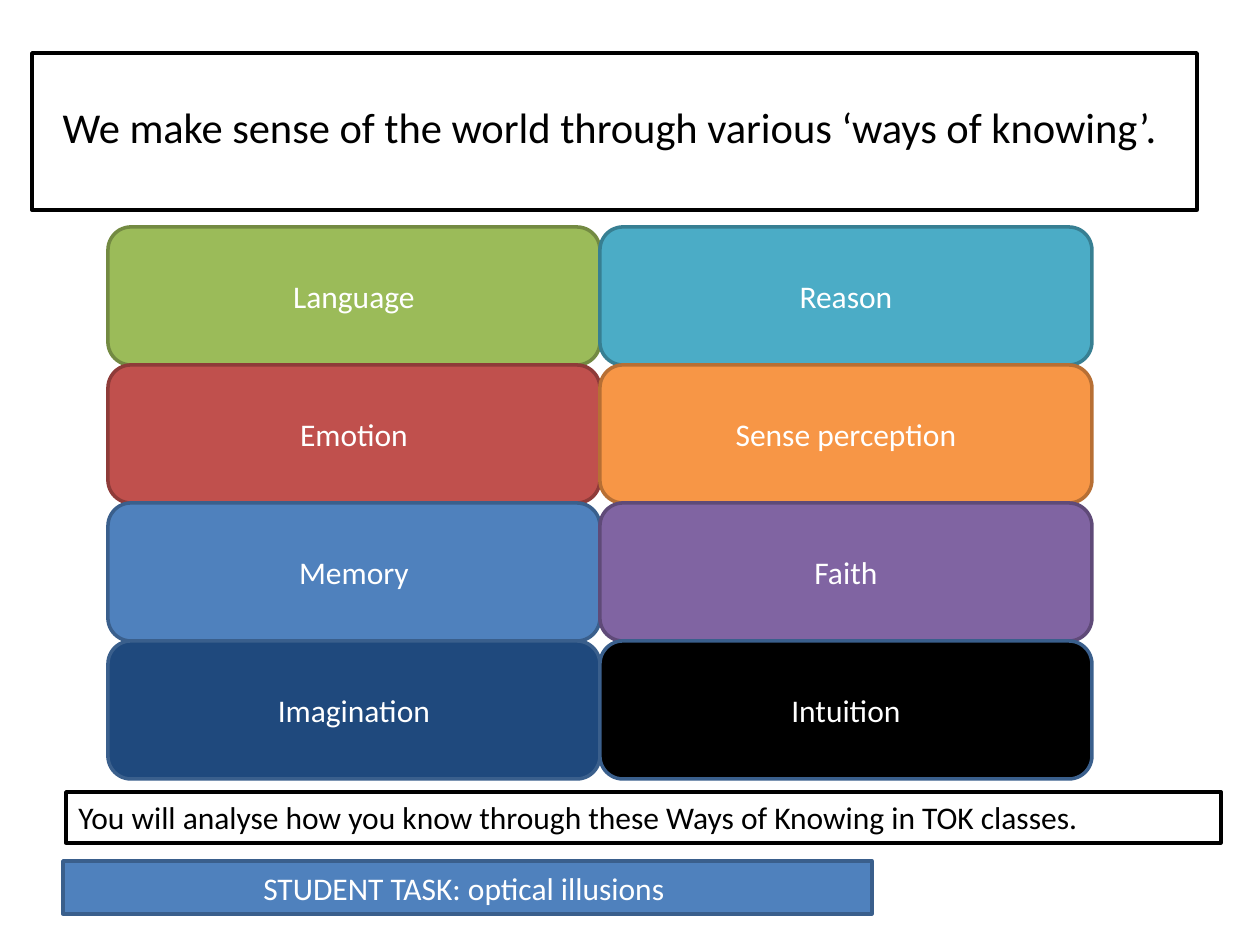
from dataclasses import dataclass

from pptx import Presentation
from pptx.dml.color import RGBColor
from pptx.enum.shapes import MSO_SHAPE
from pptx.enum.text import MSO_ANCHOR, PP_ALIGN
from pptx.util import Emu, Pt

PX_PER_INCH = 126
EMU_PER_PX = 914400 / PX_PER_INCH

WHITE = RGBColor(0xFF, 0xFF, 0xFF)
BLACK = RGBColor(0x00, 0x00, 0x00)
BLUE = RGBColor(0x4F, 0x81, 0xBD)
BLUE_EDGE = RGBColor(0x3A, 0x5F, 0x8C)
NAVY = RGBColor(0x1F, 0x49, 0x7D)
GREEN = RGBColor(0x9B, 0xBB, 0x59)
GREEN_EDGE = RGBColor(0x73, 0x8A, 0x42)
TEAL = RGBColor(0x4B, 0xAC, 0xC6)
TEAL_EDGE = RGBColor(0x37, 0x7F, 0x92)
RED = RGBColor(0xC0, 0x50, 0x4D)
RED_EDGE = RGBColor(0x8E, 0x3B, 0x39)
ORANGE = RGBColor(0xF7, 0x96, 0x46)
ORANGE_EDGE = RGBColor(0xB7, 0x6F, 0x34)
PURPLE = RGBColor(0x80, 0x64, 0xA2)
PURPLE_EDGE = RGBColor(0x5F, 0x4A, 0x78)

# Grid of ways of knowing, in px
GRID_LEFT, GRID_TOP = 108, 227
TILE_WIDTH, TILE_HEIGHT = 492, 138
COLUMNS = 2


@dataclass(frozen=True)
class Way:
    name: str
    fill: RGBColor
    edge: RGBColor


@dataclass(frozen=True)
class Panel:
    text: str
    left: int
    top: int
    width: int
    height: int
    fill: RGBColor
    edge: RGBColor
    ink: RGBColor = WHITE
    size: float = 18
    outline: MSO_SHAPE = MSO_SHAPE.RECTANGLE
    align: PP_ALIGN = PP_ALIGN.CENTER
    anchor: MSO_ANCHOR = MSO_ANCHOR.MIDDLE
    bottom_inset: int = 6


WAYS = [
    Way("Language", GREEN, GREEN_EDGE),
    Way("Reason", TEAL, TEAL_EDGE),
    Way("Emotion", RED, RED_EDGE),
    Way("Sense perception", ORANGE, ORANGE_EDGE),
    Way("Memory", BLUE, BLUE_EDGE),
    Way("Faith", PURPLE, PURPLE_EDGE),
    Way("Imagination", NAVY, BLUE_EDGE),
    Way("Intuition", BLACK, BLUE_EDGE),
]

BANNERS = [
    Panel("We make sense of the world through various ‘ways of knowing’. ",
          32, 53, 1165, 157, WHITE, BLACK, BLACK, size=24.3, bottom_inset=16),
    Panel("You will analyse how you know through these Ways of Knowing in TOK classes.",
          66, 792, 1155, 51, WHITE, BLACK, BLACK,
          align=PP_ALIGN.LEFT, anchor=MSO_ANCHOR.TOP),
    Panel("STUDENT TASK: optical illusions ", 63, 861, 809, 53, BLUE, BLUE_EDGE),
]


def px(length: int) -> Emu:
    return Emu(round(length * EMU_PER_PX))


def apply_format(target, values: dict) -> None:
    for name, value in values.items():
        setattr(target, name, value)


def way_panel(index: int, way: Way) -> Panel:
    row, column = divmod(index, COLUMNS)
    return Panel(way.name, GRID_LEFT + column * TILE_WIDTH, GRID_TOP + row * TILE_HEIGHT,
                 TILE_WIDTH, TILE_HEIGHT, way.fill, way.edge,
                 outline=MSO_SHAPE.ROUNDED_RECTANGLE)


def draw_panel(page, panel: Panel) -> None:
    box = page.shapes.add_shape(panel.outline, px(panel.left), px(panel.top),
                                px(panel.width), px(panel.height))
    box.shadow.inherit = False
    box.fill.solid()
    box.fill.fore_color.rgb = panel.fill
    box.line.color.rgb = panel.edge
    box.line.width = Pt(2)

    frame = box.text_frame
    apply_format(frame, {"word_wrap": True, "vertical_anchor": panel.anchor,
                         "margin_bottom": px(panel.bottom_inset)})
    para = frame.paragraphs[0]
    para.alignment = panel.align
    span = para.add_run()
    span.text = panel.text
    apply_format(span.font, {"name": "Calibri", "size": Pt(panel.size)})
    span.font.color.rgb = panel.ink


def main() -> None:
    deck = Presentation()
    apply_format(deck, {"slide_width": px(1260), "slide_height": px(945)})
    page = deck.slides.add_slide(deck.slide_layouts[6])

    # Coloured grid
    for index, way in enumerate(WAYS):
        draw_panel(page, way_panel(index, way))

    # Title, caption and task
    for banner in BANNERS:
        draw_panel(page, banner)

    deck.save("out.pptx")


if __name__ == "__main__":
    main()
